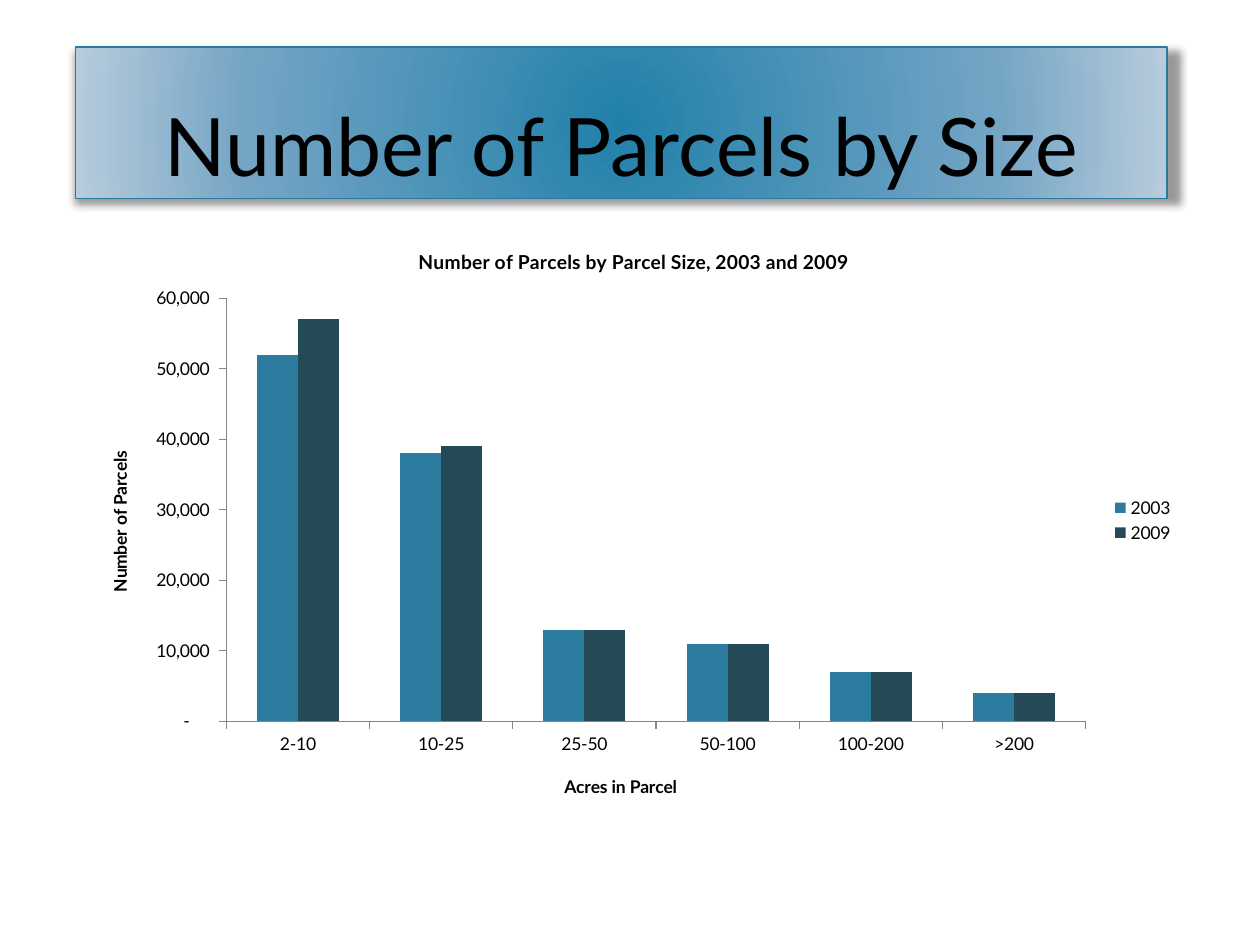
from dataclasses import dataclass

from lxml import etree
from pptx import Presentation
from pptx.chart.data import CategoryChartData
from pptx.dml.color import RGBColor
from pptx.enum.chart import XL_CHART_TYPE, XL_LEGEND_POSITION, XL_TICK_MARK
from pptx.enum.shapes import MSO_SHAPE
from pptx.enum.text import MSO_ANCHOR, PP_ALIGN
from pptx.oxml import parse_xml
from pptx.oxml.ns import nsdecls, qn
from pptx.util import Inches, Pt

COLUMNS = XL_CHART_TYPE.COLUMN_CLUSTERED
RIGHT = XL_LEGEND_POSITION.RIGHT
OUTSIDE, NO_TICK = XL_TICK_MARK.OUTSIDE, XL_TICK_MARK.NONE
RECTANGLE = MSO_SHAPE.RECTANGLE
BOTTOM, CENTER = MSO_ANCHOR.BOTTOM, PP_ALIGN.CENTER

SLIDE_WIDTH, SLIDE_HEIGHT = Inches(10), Inches(7.5)
FONT = "Lato"
COLORS = {
    "text": "000000",
    "border": "287A9E",
    "axis": "868686",
    "2003": "2C7C9F",
    "2009": "244A58",
}
BANNER_STOPS = [(0, "2180AA"), (69, "75A5C5"), (100, "B8CCDC")]
NUMBER_FORMAT = r'_(* #,##0_);_(* \(#,##0\);_(* "-"??_);_('
PARCEL_SIZES = ["2-10", "10-25", "25-50", "50-100", "100-200", ">200"]
PARCEL_COUNTS = {
    "2003": [52000, 38000, 13000, 11000, 7000, 4000],
    "2009": [57000, 39000, 13000, 11000, 7000, 4000],
}


@dataclass
class Box:
    """A place given as shares of the slide's width and height."""
    left: float
    top: float
    width: float
    height: float

    def lengths(self) -> tuple:
        return (int(self.left * SLIDE_WIDTH), int(self.top * SLIDE_HEIGHT),
                int(self.width * SLIDE_WIDTH), int(self.height * SLIDE_HEIGHT))


BANNER = Box(0.06, 0.05, 0.866, 0.16)
CHART = Box(0.06, 0.2333, 0.88, 0.6333)


def rgb(name: str) -> RGBColor:
    return RGBColor.from_string(COLORS[name])


def set_font(font, size: float, bold: bool = False) -> None:
    font.name, font.size, font.bold = FONT, Pt(size), bold
    font.color.rgb = rgb("text")


def place(element, index: int, inner: bool = False, **shares: float) -> None:
    """Fix a chart part at shares (x, y, w, h) of the chart's size."""
    for old in element.findall(qn("c:layout")):
        element.remove(old)
    layout = parse_xml(f'<c:layout {nsdecls("c")}><c:manualLayout/></c:layout>')
    values = {"layoutTarget": "inner"} if inner else {}
    values.update(xMode="edge", yMode="edge", **shares)
    for tag, value in values.items():
        etree.SubElement(layout[0], qn(f"c:{tag}")).set("val", str(value))
    element.insert(index, layout)


def add_title(owner, text: str, size: float, x: float, y: float) -> None:
    """Title a chart or an axis in bold."""
    title = owner.chart_title if hasattr(owner, "chart_title") else owner.axis_title
    title.text_frame.text = text
    set_font(title.text_frame.paragraphs[0].font, size, bold=True)
    place(title._element, 1, x=x, y=y)


def add_banner(slide, text: str) -> None:
    shape = slide.shapes.add_shape(RECTANGLE, *BANNER.lengths())
    shape.line.color.rgb = rgb("border")
    shape.line.width = Pt(1)
    # Radial gradient and soft shadow
    stops = "".join(f'<a:gs pos="{share * 1000}"><a:srgbClr val="{color}"/></a:gs>'
                    for share, color in BANNER_STOPS)
    gradient = parse_xml(
        f'<a:gradFill {nsdecls("a")} rotWithShape="1"><a:gsLst>{stops}</a:gsLst>'
        '<a:path path="circle"><a:fillToRect l="100000" t="100000" r="100000"'
        ' b="100000"/></a:path></a:gradFill>')
    shadow = parse_xml(
        f'<a:effectLst {nsdecls("a")}><a:outerShdw blurRad="{Pt(5)}" dist="{Pt(2)}"'
        ' dir="5400000" sx="101000" sy="101000" algn="tl" rotWithShape="0">'
        f'<a:srgbClr val="{COLORS["text"]}"><a:alpha val="40000"/></a:srgbClr>'
        '</a:outerShdw></a:effectLst>')
    properties = shape._element.spPr
    properties.find(qn("a:prstGeom")).addnext(gradient)
    properties.find(qn("a:ln")).addnext(shadow)
    # Heading
    frame = shape.text_frame
    frame.word_wrap, frame.vertical_anchor = True, BOTTOM
    paragraph = frame.paragraphs[0]
    paragraph.text, paragraph.alignment = text, CENTER
    set_font(paragraph.font, 46)


def style_axis(axis, title: str, x: float, y: float) -> None:
    axis.has_major_gridlines = False
    axis.major_tick_mark, axis.minor_tick_mark = OUTSIDE, NO_TICK
    axis.format.line.color.rgb = rgb("axis")
    set_font(axis.tick_labels.font, 10)
    add_title(axis, title, 10, x, y)


def add_parcel_chart(slide) -> None:
    data = CategoryChartData()
    data.categories = PARCEL_SIZES
    for year, counts in PARCEL_COUNTS.items():
        data.add_series(year, counts)
    chart = slide.shapes.add_chart(COLUMNS, *CHART.lengths(), data).chart
    set_font(chart.font, 10)
    # Columns
    plot = chart.plots[0]
    plot.gap_width, plot.overlap, plot.vary_by_categories = 150, 0, False
    for series in plot.series:
        series.format.fill.solid()
        series.format.fill.fore_color.rgb = rgb(series.name)
    place(chart._chartSpace.chart.plotArea, 0, inner=True,
          x=0.136, y=0.13, w=0.775, h=0.707)
    # Titles and axes
    add_title(chart, "Number of Parcels by Parcel Size, 2003 and 2009", 11, 0.306, 0.04)
    chart.chart_title.include_in_layout = True
    style_axis(chart.category_axis, "Acres in Parcel", 0.438, 0.92)
    style_axis(chart.value_axis, "Number of Parcels", 0.026, 0.38)
    chart.value_axis.minimum_scale, chart.value_axis.maximum_scale = 0, 60000
    chart.value_axis.major_unit = 10000
    labels = chart.value_axis.tick_labels
    labels.number_format, labels.number_format_is_linked = NUMBER_FORMAT, False
    # Legend
    chart.has_legend = True
    chart.legend.position, chart.legend.include_in_layout = RIGHT, False
    set_font(chart.legend.font, 10)
    place(chart.legend._element, 1, x=0.93, y=0.456, w=0.065, h=0.09)


def main() -> None:
    presentation = Presentation()
    presentation.slide_width, presentation.slide_height = SLIDE_WIDTH, SLIDE_HEIGHT
    slide = presentation.slides.add_slide(presentation.slide_layouts[6])
    add_banner(slide, "Number of Parcels by Size")
    add_parcel_chart(slide)
    presentation.save("out.pptx")


if __name__ == "__main__":
    main()
